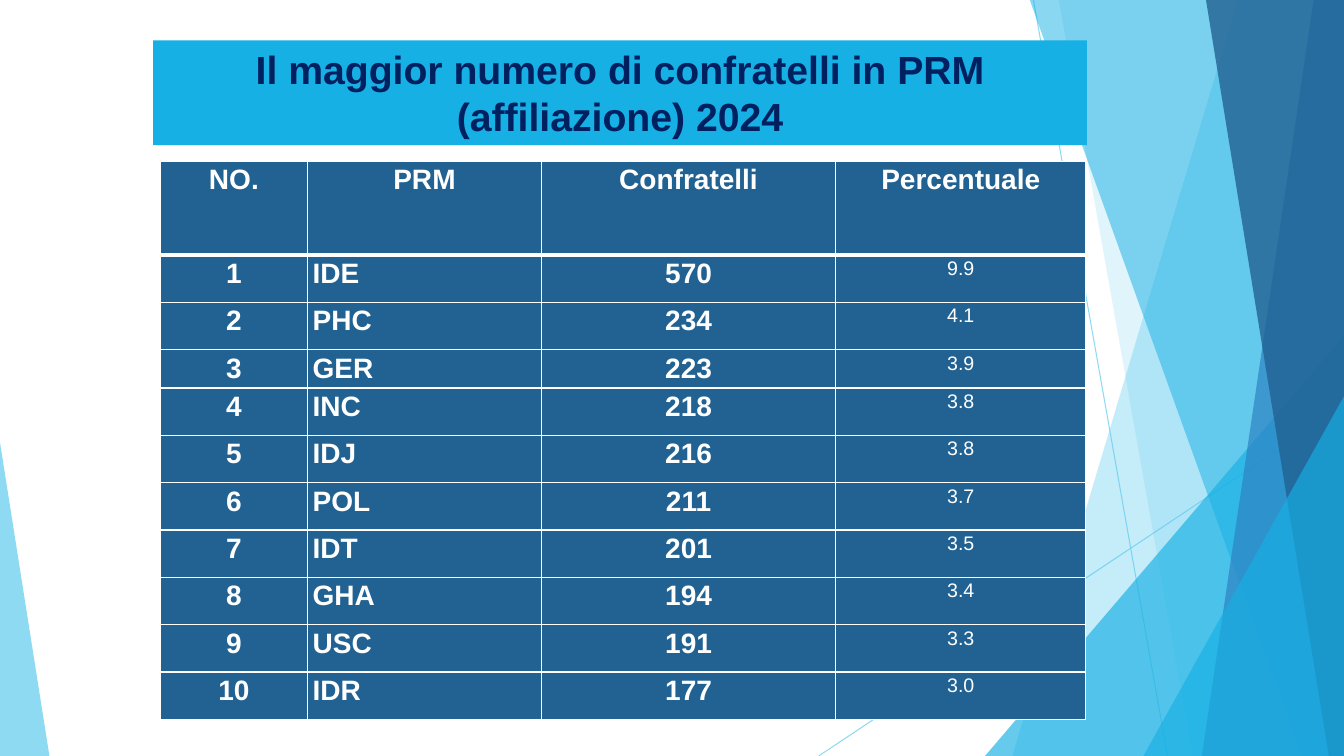
from dataclasses import dataclass

from lxml.etree import SubElement
from pptx import Presentation
from pptx.dml.color import RGBColor
from pptx.enum.shapes import MSO_CONNECTOR as Link, MSO_SHAPE as Kind
from pptx.enum.text import MSO_ANCHOR as Anchor, PP_ALIGN as Align
from pptx.oxml.ns import qn
from pptx.util import Inches, Pt


@dataclass(frozen=True)
class Theme:
    font: str = "Arial"
    white: str = "FFFFFF"
    navy: str = "002060"
    sky: str = "5FCBEF"
    cyan: str = "17B0E4"
    blue: str = "2E83C3"
    deep: str = "226292"
    title: int = 28
    body: int = 20
    small: int = 14


THEME = Theme()
WIDTH, HEIGHT = 13.33, 7.5
TOP = -0.01

# Top and bottom x of each pane's slanted left edge, colour, opacity
PANES_BACK = [(12.28, 10.04, THEME.sky, 36), (10.5, 11.83, THEME.sky, 20)]
PANES_FRONT = [
    (10.21, 12.91, THEME.cyan, 50),
    (13.03, 11.92, THEME.blue, 70),
    (11.96, 13.18, THEME.deep, 80),
]

HEADS = ["NO.", "PRM", "Confratelli", "Percentuale"]
DATA = [
    ("IDE", 570, 9.9), ("PHC", 234, 4.1), ("GER", 223, 3.9), ("INC", 218, 3.8),
    ("IDJ", 216, 3.8), ("POL", 211, 3.7), ("IDT", 201, 3.5), ("GHA", 194, 3.4),
    ("USC", 191, 3.3), ("IDR", 177, 3.0),
]
COLS = [1.46, 2.32, 2.92, 2.48]
ROWS = [0.93] + [0.47] * 10
ROWS[3] = 0.38


def put(item, values):
    for name, value in values.items():
        setattr(item, name, value)


def rgb(code):
    return RGBColor.from_string(code)


def fade(shape, alpha):
    """Set the opacity, in percent, of the shape's fill or line colour."""
    for tint in shape._element.spPr.iter(qn("a:srgbClr")):
        SubElement(tint, qn("a:alpha"), val=str(alpha * 1000))


def paint(shape, color, alpha=100):
    shape.shadow.inherit = False
    shape.fill.solid()
    shape.fill.fore_color.rgb = rgb(color)
    shape.line.fill.background()
    if alpha < 100:
        fade(shape, alpha)


def add_line(slide, start, end):
    ends = [Inches(n) for n in (*start, *end)]
    line = slide.shapes.add_connector(Link.STRAIGHT, *ends)
    line.line.color.rgb = rgb(THEME.sky)
    line.line.width = Pt(0.75)
    fade(line, 70)
    SubElement(line._element.spPr, qn("a:effectLst"))


def add_pane(slide, top, bottom, color, alpha):
    """Fill from a slanted left edge to the right side of the slide."""
    spots = [(WIDTH, TOP), (WIDTH, HEIGHT), (bottom, HEIGHT)]
    form = slide.shapes.build_freeform(Inches(top), Inches(TOP))
    form.add_line_segments([(Inches(x), Inches(y)) for x, y in spots], close=True)
    paint(form.convert_to_shape(), color, alpha)


def add_wedge(slide, box, tip, color, alpha):
    wedge = slide.shapes.add_shape(Kind.ISOSCELES_TRIANGLE, *map(Inches, box))
    wedge.adjustments[0] = tip
    paint(wedge, color, alpha)


def write(frame, text, size, color, bold=True, align=Align.CENTER):
    para = frame.paragraphs[0]
    para.alignment = align
    run = para.add_run()
    run.text = text
    put(run.font, {"name": THEME.font, "size": Pt(size), "bold": bold})
    run.font.color.rgb = rgb(color)
    return para


def add_title(slide, text):
    box = slide.shapes.add_shape(Kind.RECTANGLE, *map(Inches, (1.52, 0.4, 9.26, 1.04)))
    paint(box, THEME.cyan)
    put(box.text_frame, {"word_wrap": True, "vertical_anchor": Anchor.MIDDLE})
    write(box.text_frame, text, THEME.title, THEME.navy)


def add_edges(cell, widths):
    """Draw the cell's borders; widths maps L, R, T, B to points."""
    props = cell._tc.get_or_add_tcPr()
    for side, width in widths.items():
        edge = SubElement(props, qn(f"a:ln{side}"), w=str(Pt(width)))
        fill = SubElement(edge, qn("a:solidFill"))
        SubElement(fill, qn("a:srgbClr"), val=THEME.white)


def fill_cell(cell, text, row, col):
    put(cell, {
        "margin_left": Inches(0.05), "margin_right": Inches(0.05),
        "margin_top": Inches(0.01), "margin_bottom": 0,
    })
    add_edges(cell, {"L": 1, "R": 1, "T": 3 if row == 1 else 1, "B": 1 if row else 3})
    cell.fill.solid()
    cell.fill.fore_color.rgb = rgb(THEME.deep)
    share = row > 0 and col == 3
    size = THEME.small if share else THEME.body
    align = Align.LEFT if row and col == 1 else Align.CENTER
    para = write(cell.text_frame, text, size, THEME.white, not share, align)
    put(para, {"line_spacing": 1.07, "space_after": Pt(10)})


def add_grid(slide):
    lines = [HEADS]
    for rank, (code, count, share) in enumerate(DATA, 1):
        lines.append([str(rank), code, str(count), f"{share:.1f}"])
    box = map(Inches, (1.59, 1.6, sum(COLS), sum(ROWS)))
    grid = slide.shapes.add_table(len(ROWS), len(COLS), *box).table
    grid.horz_banding = False
    for col, width in zip(grid.columns, COLS):
        col.width = Inches(width)
    for row, height in zip(grid.rows, ROWS):
        row.height = Inches(height)
    for r, line in enumerate(lines):
        for c, text in enumerate(line):
            fill_cell(grid.cell(r, c), text, r, c)


def add_decor(slide):
    add_line(slide, (10.25, 0), (11.58, HEIGHT))
    add_line(slide, (WIDTH, 4.03), (8.12, HEIGHT))
    for pane in PANES_BACK:
        add_pane(slide, *pane)
    add_wedge(slide, (9.77, 3.33, 3.56, 4.17), 1, THEME.cyan, 66)
    for pane in PANES_FRONT:
        add_pane(slide, *pane)
    add_wedge(slide, (11.34, 3.93, 1.99, 3.57), 1, THEME.cyan, 66)
    add_wedge(slide, (0, 4.39, 0.49, 3.11), 0, THEME.sky, 70)


def main():
    deck = Presentation()
    put(deck, {"slide_width": Inches(WIDTH), "slide_height": Inches(HEIGHT)})
    slide = deck.slides.add_slide(deck.slide_layouts[6])
    add_decor(slide)
    add_title(slide, "Il maggior numero di confratelli in PRM (affiliazione) 2024")
    add_grid(slide)
    deck.save("out.pptx")


if __name__ == "__main__":
    main()
